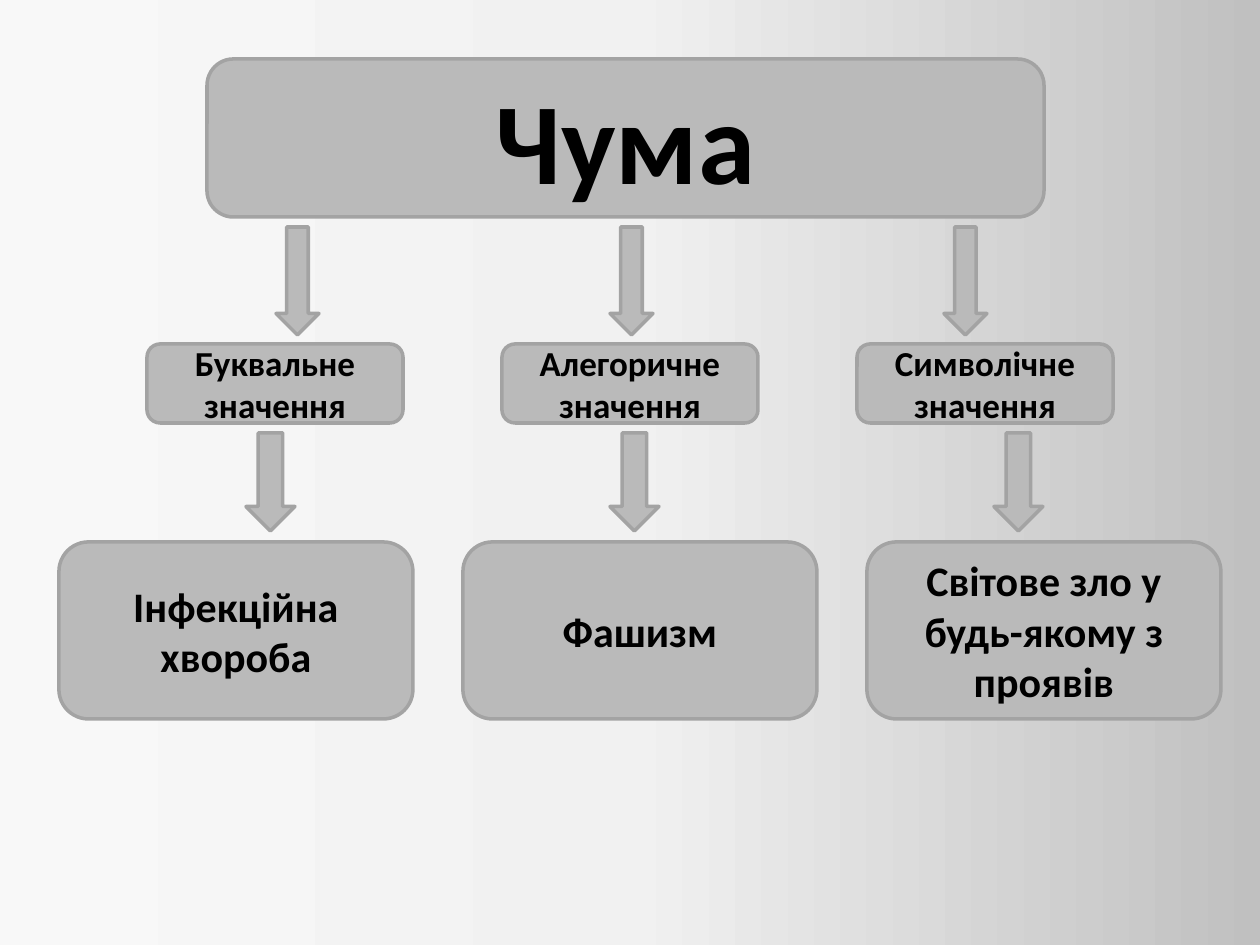
from copy import deepcopy
from dataclasses import dataclass

from pptx import Presentation
from pptx.dml.color import RGBColor
from pptx.enum import shapes, text
from pptx.oxml.ns import qn
from pptx.util import Pt

PX = 914400 // 126
FONT = "Calibri"
FILL = RGBColor(0xBA, 0xBA, 0xBA)
OUTLINE = RGBColor(0xA3, 0xA3, 0xA3)
INK = RGBColor(0, 0, 0)
BACKDROP = (
    (0, RGBColor(0xC0, 0xC0, 0xC0)),
    (0.5, RGBColor(0xF1, 0xF1, 0xF1)),
    (1, RGBColor(0xF8, 0xF8, 0xF8)),
)


@dataclass(frozen=True)
class BoxRow:
    lefts: tuple[int, ...]
    top: int
    width: int
    height: int
    size: int
    labels: tuple[str, ...]


@dataclass(frozen=True)
class ArrowRow:
    lefts: tuple[int, ...]
    top: int
    width: int
    height: int
    mirrored: bool = False


def columns(first: int, pitch: int) -> tuple[int, ...]:
    return tuple(first + pitch * column for column in range(3))


BOX_ROWS = (
    BoxRow((207,), 59, 837, 158, 66, ("Чума",)),
    BoxRow(columns(59, 404), 542, 354, 177, 24,
           ("Інфекційна хвороба", "Фашизм", "Світове зло у будь-якому з проявів")),
    BoxRow(columns(147, 355), 344, 256, 79, 20,
           ("Буквальне значення", "Алегоричне значення", "Символічне значення")),
)
ARROW_ROWS = (
    ArrowRow(columns(276, 334), 227, 43, 108, mirrored=True),
    ArrowRow((246, 610, 994), 433, 49, 98),
)


def paint_background(page) -> None:
    fill = page.background.fill
    fill.gradient()
    fill.gradient_angle = 180
    stops = page.element.find(".//" + qn("a:gsLst"))
    stops.insert(1, deepcopy(stops[0]))
    for stop, (position, color) in zip(fill.gradient_stops, BACKDROP):
        stop.position = position
        stop.color.rgb = color


def add_gray_shape(page, kind, left: int, row: BoxRow | ArrowRow):
    shape = page.shapes.add_shape(
        kind, left * PX, row.top * PX, row.width * PX, row.height * PX)
    shape.shadow.inherit = False
    shape.fill.solid()
    shape.fill.fore_color.rgb = FILL
    shape.line.color.rgb = OUTLINE
    shape.line.width = Pt(2)
    return shape


def draw_boxes(page, row: BoxRow) -> None:
    for left, label in zip(row.lefts, row.labels):
        box = add_gray_shape(page, shapes.MSO_SHAPE.ROUNDED_RECTANGLE, left, row)
        box.text_frame.word_wrap = True
        box.text_frame.vertical_anchor = text.MSO_ANCHOR.MIDDLE
        para = box.text_frame.paragraphs[0]
        para.alignment = text.PP_ALIGN.CENTER
        span = para.add_run()
        span.text = label
        span.font.name = FONT
        span.font.size = Pt(row.size)
        span.font.bold = True
        span.font.color.rgb = INK


def draw_arrows(page, row: ArrowRow) -> None:
    for left in row.lefts:
        arrow = add_gray_shape(page, shapes.MSO_SHAPE.DOWN_ARROW, left, row)
        if row.mirrored:
            arrow.element.spPr.find(qn("a:xfrm")).set("flipH", "1")


def main() -> None:
    deck = Presentation()
    deck.slide_width = 1260 * PX
    deck.slide_height = 945 * PX
    page = deck.slides.add_slide(deck.slide_layouts[6])
    paint_background(page)
    for row in BOX_ROWS:
        draw_boxes(page, row)
    for row in ARROW_ROWS:
        draw_arrows(page, row)
    deck.save("out.pptx")


if __name__ == "__main__":
    main()
